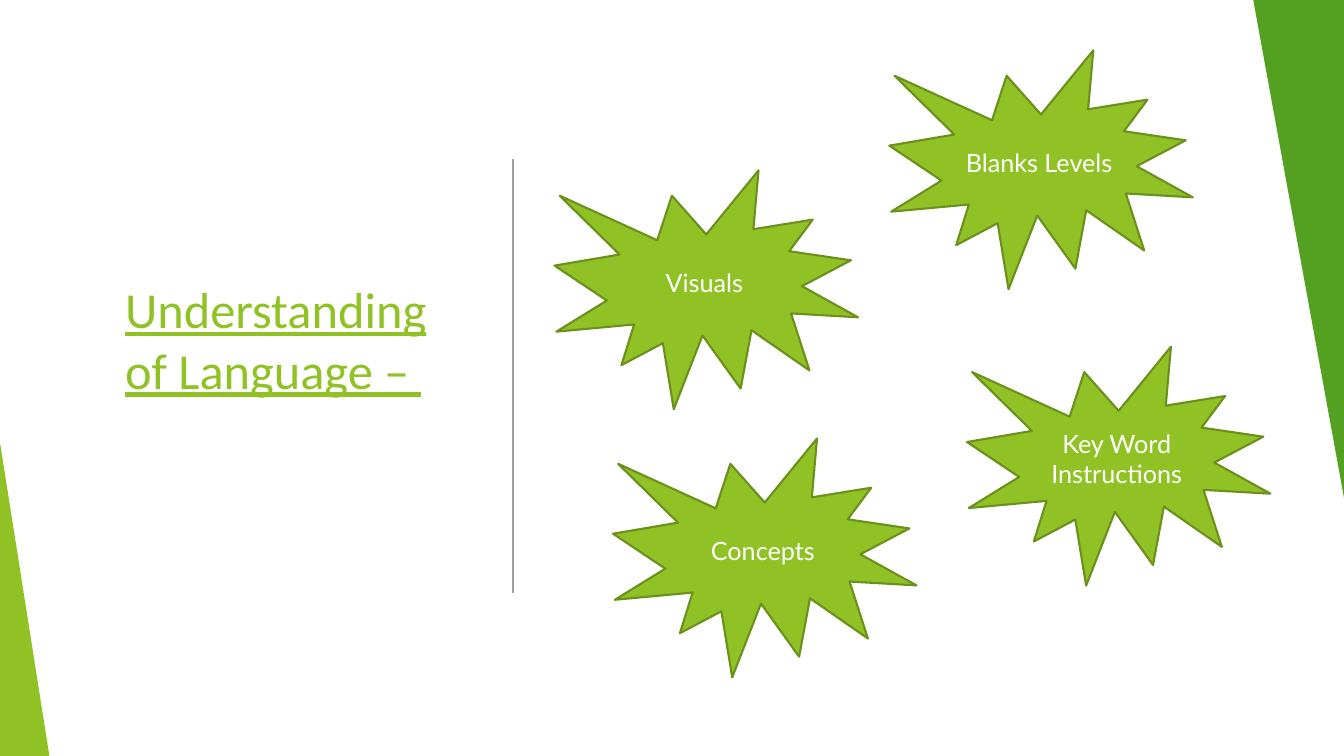
import pptx
import pptx.dml.color
import pptx.enum.shapes
import pptx.enum.text
import pptx.oxml.ns
import pptx.util
from lxml import etree
from dataclasses import dataclass

Inches = pptx.util.Inches
Shapes = pptx.enum.shapes.MSO_SHAPE

TITLE = "Understanding of Language – \v"
TITLE_BOX = (1.14, 1.29, 3.61, 4.88)
BURST_SIZE = (3.01, 2.37)
BURSTS = [  # label, left, top
    ("Visuals", 5.5, 1.69),
    ("Blanks Levels", 8.82, 0.5),
    ("Key Word Instructions", 9.59, 3.44),
    ("Concepts", 6.08, 4.35),
]
DIVIDER = (5.09, 1.58, 5.09, 5.88)


@dataclass(frozen=True)
class Theme:
    lime: str = "90C226"
    olive: str = "6B901C"
    green: str = "54A021"
    gray: str = "A0A0A0"
    white: str = "FFFFFF"
    title_font: str = "Calibri"
    label_font: str = "Lato"
    title_size: int = 36
    label_size: int = 18


THEME = Theme()


def rgb(color):
    return pptx.dml.color.RGBColor.from_string(color)


def style_text(frame, font, size, color, align, underline=None):
    frame.word_wrap = True
    frame.vertical_anchor = pptx.enum.text.MSO_ANCHOR.MIDDLE
    for para in frame.paragraphs:
        para.alignment = align
        for span in para.runs:
            span.font.name = font
            span.font.size = pptx.util.Pt(size)
            span.font.color.rgb = rgb(color)
            span.font.underline = underline


def add_filled(page, kind, bounds, fill, outline=None):
    shape = page.shapes.add_shape(kind, *map(Inches, bounds))
    shape.shadow.inherit = False
    shape.fill.solid()
    shape.fill.fore_color.rgb = rgb(fill)
    if outline:
        shape.line.color.rgb = rgb(outline)
        shape.line.width = pptx.util.Pt(1.5)
    else:
        shape.line.fill.background()
    return shape


def add_corner(page, bounds, fill, rotation=0):
    """Add a right-angled triangle with its tip above the left edge."""
    corner = add_filled(page, Shapes.ISOSCELES_TRIANGLE, bounds, fill)
    corner.adjustments[0] = 0
    corner.rotation = rotation


def add_divider(page):
    divider = page.shapes.add_connector(
        pptx.enum.shapes.MSO_CONNECTOR.STRAIGHT, *map(Inches, DIVIDER))
    divider.line.color.rgb = rgb(THEME.gray)
    divider.line.width = pptx.util.Pt(1)
    properties = divider._element.spPr
    etree.SubElement(properties, pptx.oxml.ns.qn("a:effectLst"))


def add_title(page):
    title = page.shapes.title
    title.left, title.top, title.width, title.height = map(Inches, TITLE_BOX)
    title.text_frame.text = TITLE
    title.text_frame.auto_size = pptx.enum.text.MSO_AUTO_SIZE.NONE
    style_text(title.text_frame, THEME.title_font, THEME.title_size,
               THEME.lime, pptx.enum.text.PP_ALIGN.LEFT, underline=True)


def add_burst(page, label, left, top):
    burst = add_filled(page, Shapes.EXPLOSION1, (left, top, *BURST_SIZE),
                       THEME.lime, THEME.olive)
    burst.text_frame.text = label
    style_text(burst.text_frame, THEME.label_font, THEME.label_size,
               THEME.white, pptx.enum.text.PP_ALIGN.CENTER)


def main():
    deck = pptx.Presentation()
    deck.slide_width, deck.slide_height = Inches(13.33), Inches(7.5)
    page = deck.slides.add_slide(deck.slide_layouts[5])
    add_title(page)
    add_corner(page, (0, 4.39, 0.49, 3.11), THEME.lime)
    add_divider(page)
    add_corner(page, (12.43, 0, 0.92, 5.05), THEME.green, rotation=180)
    for label, left, top in BURSTS:
        add_burst(page, label, left, top)
    deck.save("out.pptx")


if __name__ == "__main__":
    main()
